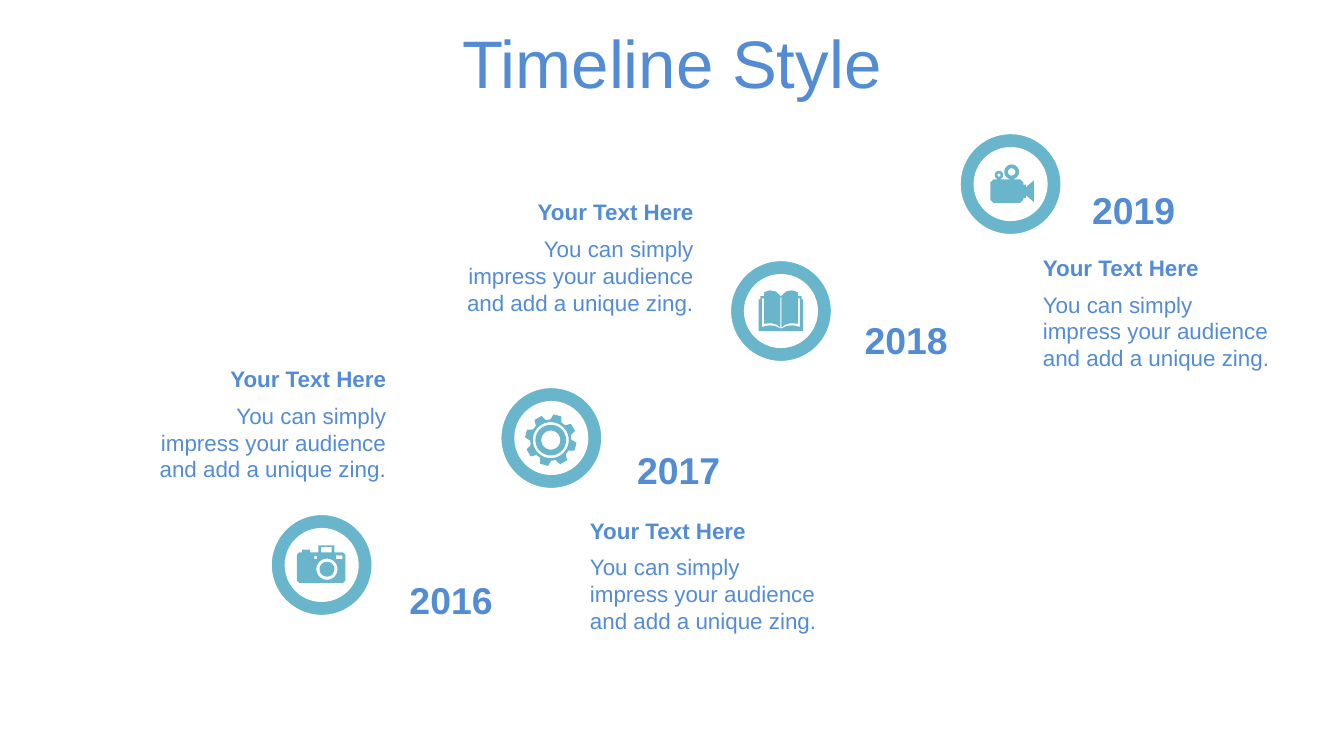
from math import cos, pi, radians, sin

from pptx import Presentation
from pptx.dml.color import RGBColor
from pptx.enum.shapes import MSO_SHAPE as Shape
from pptx.enum.text import MSO_ANCHOR as Anchor, PP_ALIGN as Align
from pptx.util import Cm, Pt

BLUE = RGBColor(0x53, 0x8C, 0xD5)
TEAL = RGBColor(0x69, 0xB6, 0xCC)
WHITE = RGBColor(0xFF, 0xFF, 0xFF)
FONT = "Arial"
HEAD = "Your Text Here"
BODY = "You can simply impress your audience and add a unique zing."


# Outlines: lists of points in cm, measured from the middle of a disc
def circle(x, y, r, count=48):
    turns = [2 * pi * i / count for i in range(count)]
    return [(x + r * cos(a), y + r * sin(a)) for a in turns]


def rect(left, top, right, bottom):
    return [(left, top), (right, top), (right, bottom), (left, bottom)]


def mirror(half):
    return half + [(-x, y) for x, y in reversed(half)]


def camera():
    case = [(-.47, -.19), (-.42, -.24), (-.37, -.24), (-.37, -.29),
            (-.22, -.29), (-.22, -.24), (-.06, -.24), (-.06, -.37),
            (.24, -.37), (.24, -.24), (.4, -.24), (.45, -.19),
            (.45, .29), (.4, .34), (-.42, .34), (-.47, .29)]
    return [case, circle(.1, .08, .2), circle(.1, .08, .14),
            rect(-.01, -.34, .19, -.24), rect(-.14, -.17, -.09, -.11),
            rect(.27, -.18, .39, -.11)]


def gear():
    x, y = -.01, .04
    tooth = [(-16, .39), (-9, .49), (9, .49), (16, .39)]
    rim = []
    for i in range(8):
        for turn, r in tooth:
            a = radians(15 + 45 * i + turn)
            rim.append((x + r * sin(a), y - r * cos(a)))
    return [rim] + [circle(x, y, r) for r in (.34, .29, .18)]


def book():
    cover = [(-.42, .38), (-.42, -.22), (-.39, -.22), (-.39, -.28),
             (-.32, -.28), (-.32, -.35), (-.26, -.38), (-.2, -.39),
             (-.1, -.37), (0, -.28)]
    gap = [(0, .33), (-.12, .28), (-.22, .27), (-.36, .3), (-.36, -.24),
           (-.32, -.24), (-.32, .24), (-.18, .23), (-.08, .26),
           (-.01, .31), (-.01, -.26)]
    return [mirror(cover), mirror(gap)]


def video():
    case = [(-.38, -.03), (-.32, -.09), (.18, -.09), (.24, -.03),
            (.24, .01), (.29, .01), (.29, .06), (.44, -.07), (.44, .34),
            (.29, .21), (.29, .26), (.24, .26), (.24, .3), (.18, .36),
            (-.32, .36), (-.38, .3)]
    return [case, circle(.02, -.23, .14), circle(.02, -.23, .07),
            circle(-.22, -.17, .08), circle(-.22, -.17, .03)]


def draw(slide, x, y, parts):
    """Draw one icon around the point x, y."""
    grid = [[(round(a * 1000), round(b * 1000)) for a, b in part]
            for part in parts]
    pen = slide.shapes.build_freeform(*grid[0][0], scale=Cm(1) / 1000)
    pen.add_line_segments(grid[0][1:])
    for part in grid[1:]:
        pen.move_to(*part[0])
        pen.add_line_segments(part[1:])
    icon = pen.convert_to_shape(Cm(x), Cm(y))
    icon.shadow.inherit = False
    icon.fill.solid()
    icon.fill.fore_color.rgb = TEAL
    icon.line.fill.background()


def disc(slide, x, y, size, color):
    """Draw a filled circle around the point x, y."""
    dot = slide.shapes.add_shape(Shape.OVAL, Cm(x - size / 2),
                                 Cm(y - size / 2), Cm(size), Cm(size))
    dot.shadow.inherit = False
    dot.fill.solid()
    dot.fill.fore_color.rgb = color
    return dot


def badge(slide, left, top, size, icon):
    """Draw a ring with an icon in its middle."""
    x, y = left + size / 2, top + size / 2
    ring = disc(slide, x, y, size, TEAL)
    ring.line.color.rgb = WHITE
    ring.line.width = Pt(3.25)
    disc(slide, x, y, size * 0.7, WHITE).line.fill.background()
    draw(slide, x, y, icon())


def style(frame, text, size, bold=False, align=Align.LEFT, anchor=Anchor.TOP):
    frame.word_wrap = True
    frame.vertical_anchor = anchor
    par = frame.paragraphs[0]
    par.text = text
    par.alignment = align
    par.font.name = FONT
    par.font.size = Pt(size)
    par.font.bold = bold
    par.font.color.rgb = BLUE


def label(slide, left, top, width, height, *args, **kinds):
    box = slide.shapes.add_textbox(Cm(left), Cm(top), Cm(width), Cm(height))
    style(box.text_frame, *args, **kinds)


def note(slide, left, top, width, align):
    """Place a heading with its body text below."""
    label(slide, left, top, width, 0.76, HEAD, 12, True, align)
    label(slide, left, top + 0.69, width, 1.8, BODY, 12, align=align)


def title(slide, left, top, width, height):
    head = slide.shapes.title
    head.left, head.top = Cm(left), Cm(top)
    head.width, head.height = Cm(width), Cm(height)
    style(head.text_frame, "Timeline Style", 36, align=Align.CENTER,
          anchor=Anchor.MIDDLE)


def main():
    deck = Presentation()
    deck.slide_width, deck.slide_height = Cm(25.4), Cm(14.29)
    slide = deck.slides.add_slide(deck.slide_layouts[5])
    title(slide, 0, 0.36, 25.4, 1.6)

    # Steps climb from lower left to upper right
    steps = [("2016", camera, 2.75, 6.78, Align.RIGHT),
             ("2017", gear, 10.9, 9.65, Align.LEFT),
             ("2018", book, 8.56, 3.63, Align.RIGHT),
             ("2019", video, 19.46, 4.68, Align.LEFT)]
    for i, (year, icon, left, top, align) in enumerate(steps):
        badge(slide, 5.08 + 4.34 * i, 9.68 - 2.4 * i, 2, icon)
        label(slide, 7.49 + 4.3 * i, 10.74 - 2.46 * i, 2.95, 1.19,
              year, 20, True, anchor=Anchor.MIDDLE)
        note(slide, left, top, 4.8, align)
    deck.save("out.pptx")


if __name__ == "__main__":
    main()
